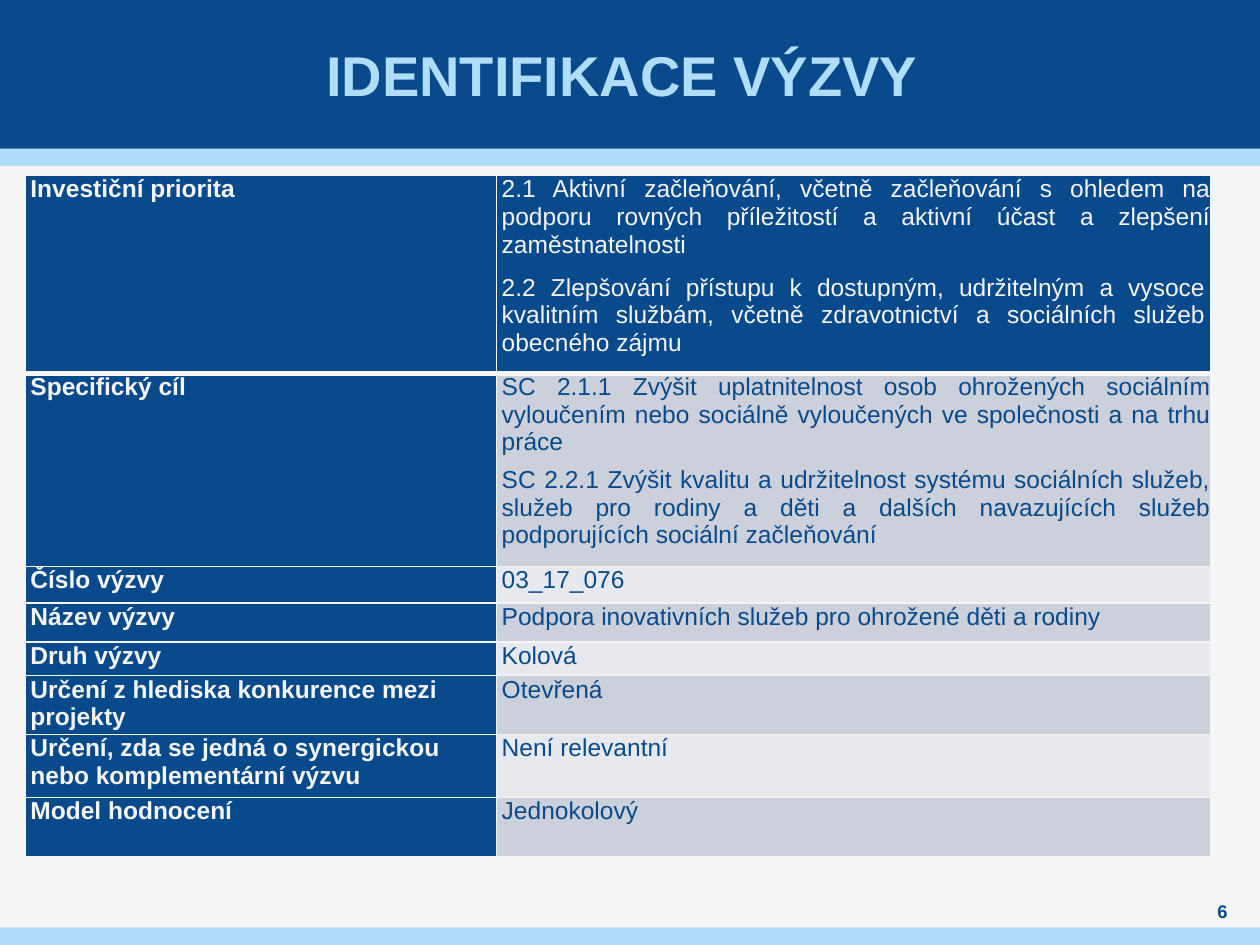
from lxml import etree
from pptx import Presentation
from pptx.dml.color import RGBColor
from pptx.enum.shapes import MSO_SHAPE as Shape
from pptx.enum.text import MSO_ANCHOR as Anchor, PP_ALIGN as Align
from pptx.oxml.ns import qn
from pptx.util import Pt

NAVY, SKY, PAPER = "084A8B", "AFDDFA", "F5F5F5"
BANDS = ("E7E9EE", "CCD0DA")
WIDTH, HEIGHT = 720, 540
BANNER_HEIGHT, STRIPE_HEIGHT = 85, 10

COLUMN_WIDTHS = (269.3, 408.2)
ROW_HEIGHTS = (113, 110.2, 20.9, 22.3, 19.4, 32.4, 36, 33.8)
CALL_ROWS = [
    ("Investiční priorita", [
        "2.1 Aktivní začleňování, včetně začleňování s ohledem na podporu rovných "
        "příležitostí a aktivní účast a zlepšení zaměstnatelnosti",
        "2.2 Zlepšování přístupu k dostupným, udržitelným a vysoce kvalitním službám, "
        "včetně zdravotnictví a sociálních služeb obecného zájmu"]),
    ("Specifický cíl", [
        "SC 2.1.1 Zvýšit uplatnitelnost osob ohrožených sociálním vyloučením nebo "
        "sociálně vyloučených ve společnosti a na trhu práce",
        "SC 2.2.1 Zvýšit kvalitu a udržitelnost systému sociálních služeb, služeb pro "
        "rodiny a děti a dalších navazujících služeb podporujících sociální začleňování"]),
    ("Číslo výzvy", ["03_17_076"]),
    ("Název výzvy", ["Podpora inovativních služeb pro ohrožené děti a rodiny"]),
    ("Druh výzvy", ["Kolová"]),
    ("Určení z hlediska konkurence mezi projekty", ["Otevřená"]),
    ("Určení, zda se jedná o synergickou nebo komplementární výzvu", ["Není relevantní"]),
    ("Model hodnocení", ["Jednokolový"]),
]


def color(hex_code):
    return RGBColor.from_string(hex_code)


def add_run(paragraph, text, size, hex_code, bold=False):
    run = paragraph.add_run()
    run.text = text
    font = run.font
    font.name, font.size, font.bold = "Arial", Pt(size), bold
    font.color.rgb = color(hex_code)


def add_band(slide, left, top, width, height, hex_code):
    band = slide.shapes.add_shape(Shape.RECTANGLE, Pt(left), Pt(top), Pt(width), Pt(height))
    band.shadow.inherit = False
    band.fill.solid()
    band.fill.fore_color.rgb = color(hex_code)
    band.line.fill.background()


def add_centred_text(slide, left, top, width, height, text, size, hex_code):
    box = slide.shapes.add_textbox(Pt(left), Pt(top), Pt(width), Pt(height))
    frame = box.text_frame
    frame.word_wrap = True
    frame.vertical_anchor = Anchor.MIDDLE
    frame.margin_left = frame.margin_right = frame.margin_top = frame.margin_bottom = 0
    paragraph = frame.paragraphs[0]
    paragraph.alignment = Align.CENTER
    add_run(paragraph, text, size, hex_code, bold=True)


def add_banner(slide, left, top, width, height):
    add_band(slide, left, top + height, width, STRIPE_HEIGHT, SKY)
    add_band(slide, left, top, width, height, NAVY)
    add_centred_text(slide, left + 23.5, top, width - 56, height, "IDENTIFIKACE VÝZVY", 32, SKY)


def add_footer(slide, left, top, width, height):
    add_band(slide, left, top, width, height, SKY)
    add_centred_text(slide, left + width - 40, top - 16.5, 37, 14.5, "6", 10.5, NAVY)


def set_borders(cell, widths):
    properties = cell._tc.get_or_add_tcPr()
    for side, width in widths.items():
        line = etree.SubElement(properties, qn(f"a:ln{side}"), w=str(Pt(width)))
        fill = etree.SubElement(line, qn("a:solidFill"))
        etree.SubElement(fill, qn("a:srgbClr"), val=PAPER)


def fill_cell(cell, texts, fill_hex, text_hex, is_label):
    cell.margin_left = cell.margin_right = cell.margin_top = cell.margin_bottom = 0
    cell.fill.solid()
    cell.fill.fore_color.rgb = color(fill_hex)
    frame = cell.text_frame
    for index, text in enumerate(texts):
        paragraph = frame.add_paragraph() if index else frame.paragraphs[0]
        paragraph.alignment = Align.LEFT if is_label else Align.JUSTIFY
        paragraph._p.get_or_add_pPr().set("marL", str(Pt(3)))
        paragraph.space_after = Pt(6 if len(texts) > 1 else 3)
        add_run(paragraph, text, 14, text_hex, bold=is_label)


def add_call_table(slide, left, top, width, height):
    table = slide.shapes.add_table(len(CALL_ROWS), len(COLUMN_WIDTHS), Pt(left), Pt(top),
                                   Pt(width), Pt(height)).table
    for column, column_width in zip(table.columns, COLUMN_WIDTHS):
        column.width = Pt(column_width)
    for index, (label, values) in enumerate(CALL_ROWS):
        table.rows[index].height = Pt(ROW_HEIGHTS[index])
        is_header = index == 0
        # A heavier rule separates the header from the body
        borders = {"L": 1, "R": 1, "T": 3 if index == 1 else 1, "B": 3 if is_header else 1}
        label_cell, value_cell = table.cell(index, 0), table.cell(index, 1)
        for cell in (label_cell, value_cell):
            set_borders(cell, borders)
        fill_cell(label_cell, [label], NAVY, PAPER, True)
        fill_cell(value_cell, values, NAVY if is_header else BANDS[index % 2],
                  PAPER if is_header else NAVY, False)

    # The second priority is spaced apart and inset on the right
    second_priority = table.cell(0, 1).text_frame.paragraphs[1]
    second_priority.space_before = Pt(3)
    second_priority._p.get_or_add_pPr().set("marR", str(Pt(3)))


def main():
    deck = Presentation()
    deck.slide_width, deck.slide_height = Pt(WIDTH), Pt(HEIGHT)
    slide = deck.slides.add_slide(deck.slide_layouts[6])
    slide.background.fill.solid()
    slide.background.fill.fore_color.rgb = color(PAPER)

    add_banner(slide, 0, 0, WIDTH, BANNER_HEIGHT)
    add_footer(slide, 0, HEIGHT - STRIPE_HEIGHT, WIDTH, STRIPE_HEIGHT)
    add_call_table(slide, 14.4, 100.4, sum(COLUMN_WIDTHS), sum(ROW_HEIGHTS))
    deck.save("out.pptx")


if __name__ == "__main__":
    main()
